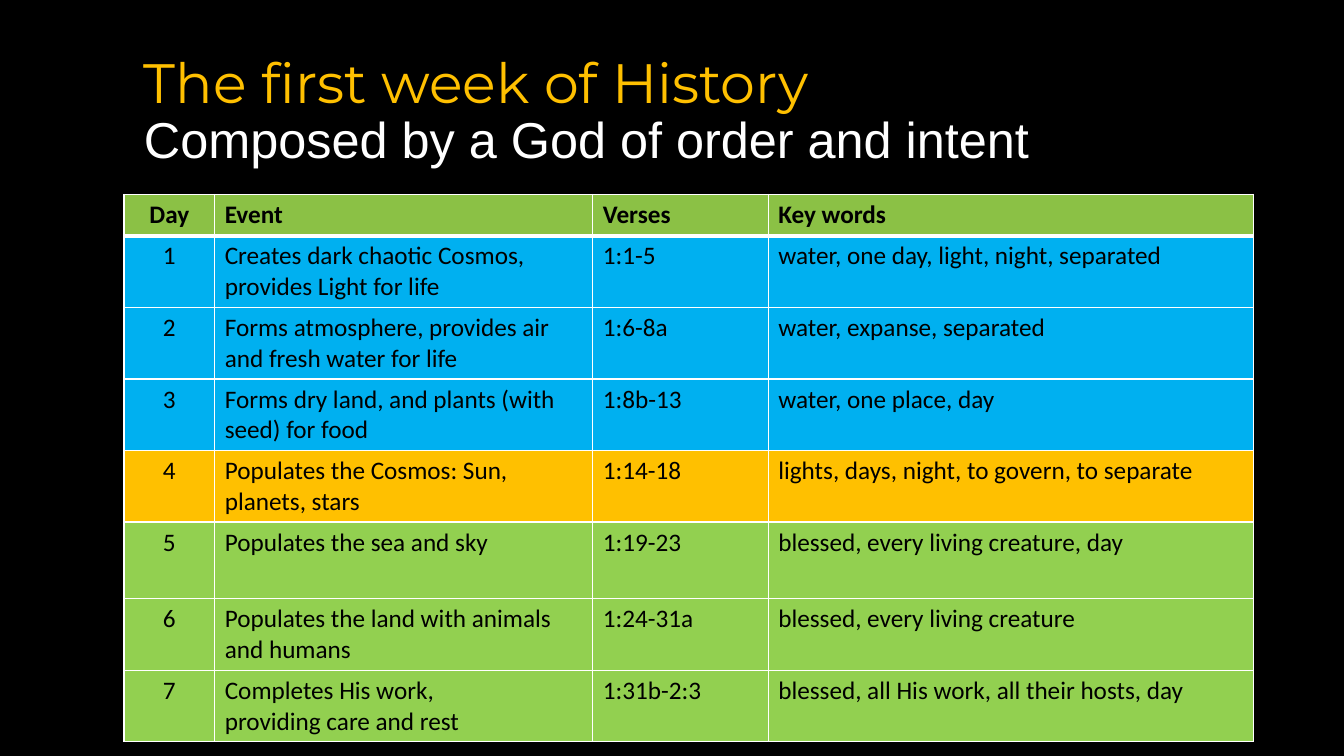
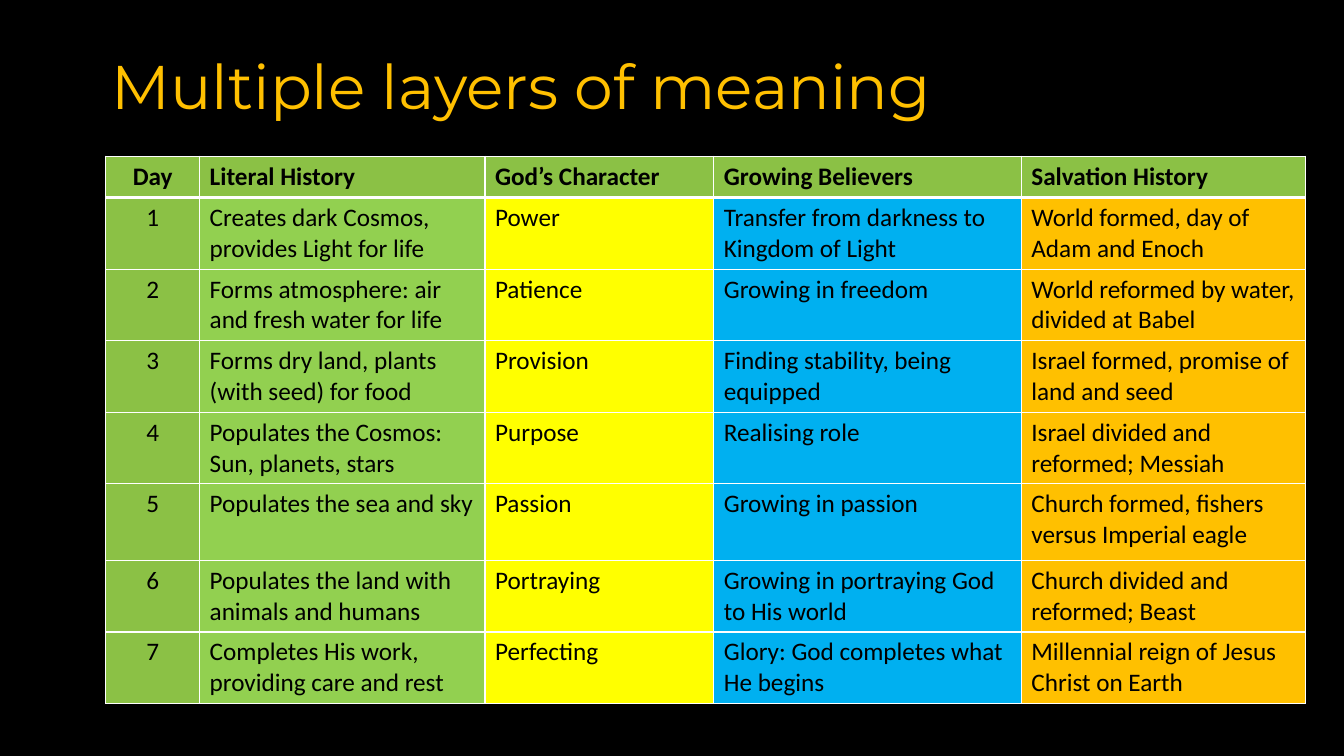
from lxml import etree
from pptx import Presentation
from pptx.dml.color import RGBColor
from pptx.enum import text
from pptx.oxml import ns
from pptx.util import Inches, Pt

BLACK = RGBColor(0x00, 0x00, 0x00)
WHITE = RGBColor(0xFF, 0xFF, 0xFF)
GOLD = RGBColor(0xFF, 0xC0, 0x00)
YELLOW = RGBColor(0xFF, 0xFF, 0x00)
BLUE = RGBColor(0x00, 0xB0, 0xF0)
GREEN = RGBColor(0x92, 0xD0, 0x50)
HEADER_GREEN = RGBColor(0x8B, 0xC1, 0x45)

TITLE_FONT = "Montserrat"
TITLE_SIZE = (10.34, 0.98)
HEADER_HEIGHT, ROW_HEIGHT, TALL_HEIGHT = 0.41, 0.71, 0.76
TALL_ROW = 5

WEEK = [
    ("Day", "Event", "Verses", "Key words"),
    ("1", "Creates dark chaotic Cosmos, provides Light for life", "1:1-5",
     "water, one day, light, night, separated"),
    ("2", "Forms atmosphere, provides air and fresh water for life", "1:6-8a",
     "water, expanse, separated"),
    ("3", "Forms dry land, and plants (with seed) for food", "1:8b-13",
     "water, one place, day"),
    ("4", "Populates the Cosmos: Sun, planets, stars", "1:14-18",
     "lights, days, night, to govern, to separate"),
    ("5", "Populates the sea and sky", "1:19-23",
     "blessed, every living creature, day"),
    ("6", "Populates the land with animals and humans", "1:24-31a",
     "blessed, every living creature"),
    ("7", "Completes His work,\nproviding care and rest", "1:31b-2:3",
     "blessed, all His work, all their hosts, day"),
]
WEEK_FILLS = [BLUE] * 3 + [GOLD] + [GREEN] * 3

LAYERS = [
    ("Day", "Literal History", "God’s Character", "Growing Believers",
     "Salvation History"),
    ("1", "Creates dark Cosmos, provides Light for life", "Power",
     "Transfer from darkness to Kingdom of Light",
     "World formed, day of Adam and Enoch"),
    ("2", "Forms atmosphere: air and fresh water for life", "Patience",
     "Growing in freedom", "World reformed by water, divided at Babel"),
    ("3", "Forms dry land, plants (with seed) for food", "Provision",
     "Finding stability, being equipped",
     "Israel formed, promise of land and seed"),
    ("4", "Populates the Cosmos: Sun, planets, stars", "Purpose",
     "Realising role", "Israel divided and reformed; Messiah"),
    ("5", "Populates the sea and sky", "Passion",
     "Growing in passion", "Church formed, fishers versus Imperial eagle"),
    ("6", "Populates the land with animals and humans", "Portraying",
     "Growing in portraying God to His world",
     "Church divided and reformed; Beast"),
    ("7", "Completes His work,\nproviding care and rest", "Perfecting",
     "Glory: God completes what He begins",
     "Millennial reign of Jesus Christ on Earth"),
]
LAYER_FILLS = [HEADER_GREEN, GREEN, YELLOW, BLUE, GOLD]


def add_run(p, words, *, font="Calibri", size=18, color=BLACK, bold=False):
    r = p.add_run()
    r.text = words
    r.font.name = font
    r.font.size = Pt(size)
    r.font.color.rgb = color
    r.font.bold = bold


def add_slide(prs):
    s = prs.slides.add_slide(prs.slide_layouts[6])
    s.background.fill.solid()
    s.background.fill.fore_color.rgb = BLACK
    return s


def add_title(s, left, top, lines):
    """Each line is a pair: its words and a dict of its format."""
    box = s.shapes.add_textbox(*map(Inches, (left, top, *TITLE_SIZE)))
    tf = box.text_frame
    tf.word_wrap = True
    tf.vertical_anchor = text.MSO_ANCHOR.BOTTOM
    p = tf.paragraphs[0]
    p.line_spacing = 0.9
    for i, (words, style) in enumerate(lines):
        if i:
            p.add_line_break()
        add_run(p, words, **style)


def set_borders(cell, **widths):
    tc_pr = cell._tc.get_or_add_tcPr()
    for side in "LRTB":
        ln = etree.SubElement(tc_pr, ns.qn("a:ln" + side),
                              w=str(Pt(widths.get(side, 1))))
        fill = etree.SubElement(ln, ns.qn("a:solidFill"))
        etree.SubElement(fill, ns.qn("a:srgbClr"), val=str(WHITE))


def add_day_table(s, left, top, widths, rows, body_fill):
    """body_fill gives the colour of a body cell from its row and column."""
    heights = [HEADER_HEIGHT] + [ROW_HEIGHT] * (len(rows) - 1)
    heights[TALL_ROW] = TALL_HEIGHT
    frame = s.shapes.add_table(
        len(rows), len(widths),
        *map(Inches, (left, top, sum(widths), sum(heights))))
    table = frame.table
    for column, width in zip(table.columns, widths):
        column.width = Inches(width)
    for row, height in zip(table.rows, heights):
        row.height = Inches(height)

    for i, row in enumerate(rows):
        for j, words in enumerate(row):
            cell = table.cell(i, j)
            # A thick rule separates the header from the days
            set_borders(cell, B=3 if i == 0 else 1, T=3 if i == 1 else 1)
            cell.fill.solid()
            cell.fill.fore_color.rgb = body_fill(i, j) if i else HEADER_GREEN
            tf = cell.text_frame
            for k, line in enumerate(words.split("\n")):
                p = tf.add_paragraph() if k else tf.paragraphs[0]
                if j == 0:
                    p.alignment = text.PP_ALIGN.CENTER
                add_run(p, line, bold=i == 0)


def week_slide(prs):
    s = add_slide(prs)
    add_title(s, 1.33, 0.75, [
        ("The first week of History",
         dict(font=TITLE_FONT, size=39.6, color=GOLD)),
        ("Composed by a God of order and intent",
         dict(font="Arial", size=36, color=WHITE)),
    ])
    add_day_table(s, 1.23, 1.93, [0.9, 3.75, 1.74, 4.81], WEEK,
                  lambda i, j: WEEK_FILLS[i - 1])


def layers_slide(prs):
    s = add_slide(prs)
    add_title(s, 1.01, 0.29, [
        ("Multiple layers of meaning",
         dict(font=TITLE_FONT, size=44, color=GOLD)),
    ])
    add_day_table(s, 1.05, 1.55, [0.93, 2.83, 2.27, 3.05, 2.82], LAYERS,
                  lambda i, j: LAYER_FILLS[j])


def main():
    prs = Presentation()
    prs.slide_width, prs.slide_height = Inches(13.33), Inches(7.5)
    week_slide(prs)
    layers_slide(prs)
    prs.save("out.pptx")


if __name__ == "__main__":
    main()
